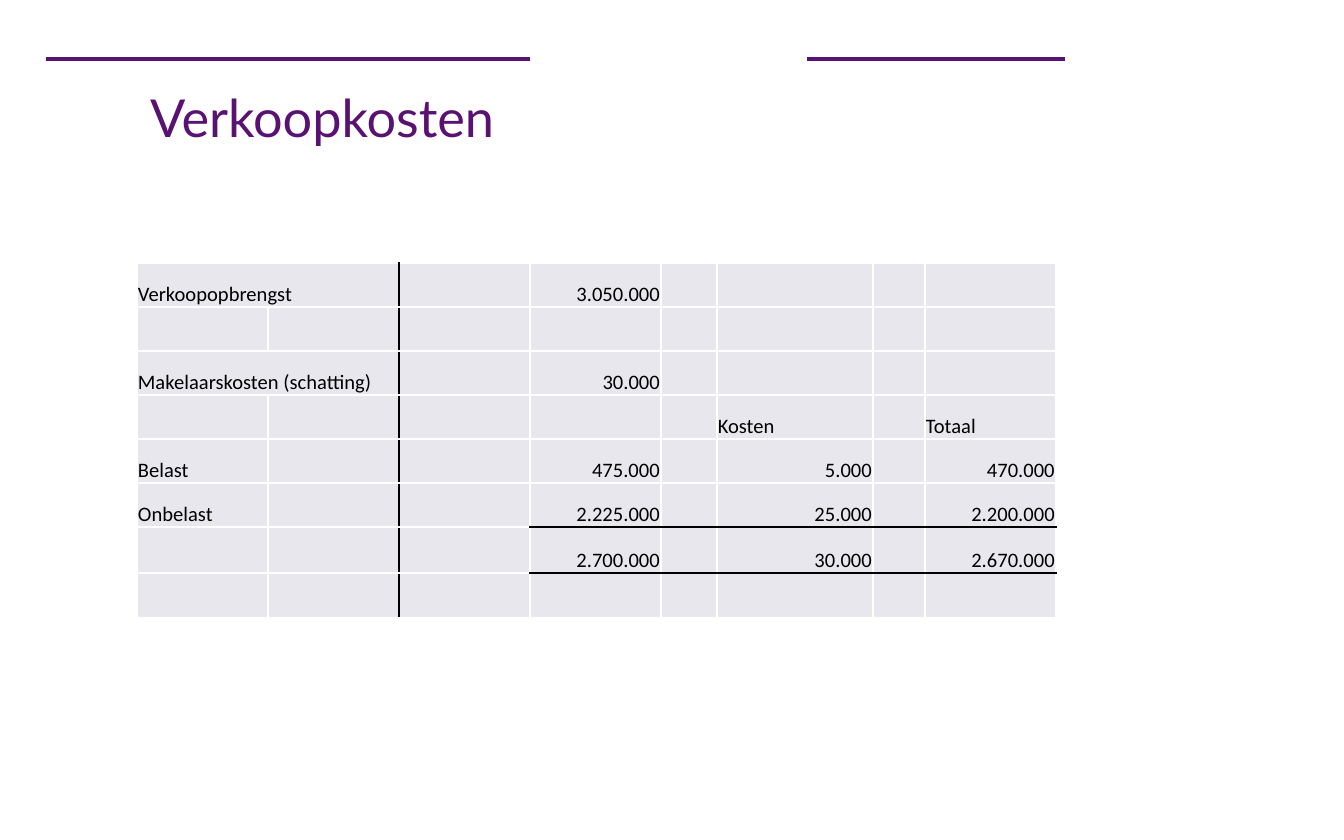
import lxml.etree
import pptx
import pptx.dml.color
import pptx.enum.shapes
import pptx.enum.text
import pptx.oxml.ns
import pptx.util

PX = 914400 / 134.4
COLORS = {"purple": "591172", "cell": "E8E7EE", "ink": "000000", "grid": "FFFFFF"}
COLUMNS = [131, 131, 131, 131, 56, 156, 52, 131]
ROWS = [44, 44, 44, 44, 44, 44, 46, 45]
COSTS = [
    ["Verkoopopbrengst", "", "", "3.050.000", "", "", "", ""],
    [""] * 8,
    ["Makelaarskosten (schatting)", "", "", "30.000", "", "", "", ""],
    ["", "", "", "", "", "Kosten", "", "Totaal"],
    ["Belast", "", "", "475.000", "", "5.000", "", "470.000"],
    ["Onbelast", "", "", "2.225.000", "", "25.000", "", "2.200.000"],
    ["", "", "", "2.700.000", "", "30.000", "", "2.670.000"],
    [""] * 8,
]
MERGED_ROWS = (0, 2)
RULED_ROWS = (5, 6)
LABEL_COLUMNS = 2
FIRST_AMOUNT = 3


def px(length):
    """Turn px into EMU."""
    return pptx.util.Emu(round(length * PX))


def rgb(name):
    """Look up a colour by name."""
    return pptx.dml.color.RGBColor.from_string(COLORS[name])


def apply(target, values):
    """Set attributes from a dict of format values."""
    for key, value in values.items():
        setattr(target, key, value)


def write(paragraph, text, font, size, color):
    """Write one formatted run into a paragraph."""
    run = paragraph.add_run()
    run.text = text
    apply(run.font, {"name": font, "size": pptx.util.Pt(size)})
    run.font.color.rgb = rgb(color)


def add_header_rules(slide, left, top, width):
    """Draw the two rules across the top of the box."""
    for start, end in ((0, 484), (761, width)):
        rule = slide.shapes.add_connector(
            pptx.enum.shapes.MSO_CONNECTOR.STRAIGHT,
            px(left + start), px(top), px(left + end), px(top))
        rule.line.color.rgb = rgb("purple")
        rule.line.width = pptx.util.Pt(2)
        lxml.etree.SubElement(rule._element.spPr, pptx.oxml.ns.qn("a:effectLst"))


def add_title(slide, left, top, width, height):
    """Place the slide title in the box."""
    title = slide.shapes.add_textbox(px(left), px(top), px(width), px(height))
    title.text_frame.word_wrap = True
    write(title.text_frame.paragraphs[0], "Verkoopkosten", "Lato", 28, "purple")


def add_border(cell, side, color):
    """Draw one side of a cell border."""
    border = lxml.etree.SubElement(
        cell._tc.get_or_add_tcPr(), pptx.oxml.ns.qn(f"a:ln{side}"), w="12700")
    fill = lxml.etree.SubElement(border, pptx.oxml.ns.qn("a:solidFill"))
    lxml.etree.SubElement(fill, pptx.oxml.ns.qn("a:srgbClr"), val=COLORS[color])


def border_colors(row, column):
    """Give the colour of each side of a cell."""
    amount = column >= FIRST_AMOUNT
    dark = {
        "L": column == LABEL_COLUMNS,
        "R": column == LABEL_COLUMNS - 1 or (row in MERGED_ROWS and column == 0),
        "T": amount and row - 1 in RULED_ROWS,
        "B": amount and row in RULED_ROWS,
    }
    return {side: "ink" if is_dark else "grid" for side, is_dark in dark.items()}


def fill_cell(cell, text, row, column):
    """Format one cell and write its text."""
    apply(cell, {
        "margin_left": px(1), "margin_right": px(1), "margin_top": px(1),
        "margin_bottom": 0, "vertical_anchor": pptx.enum.text.MSO_ANCHOR.BOTTOM})
    for side, color in border_colors(row, column).items():
        add_border(cell, side, color)
    cell.fill.solid()
    cell.fill.fore_color.rgb = rgb("cell")
    paragraph = cell.text_frame.paragraphs[0]
    if text:
        if text[0].isdigit():
            paragraph.alignment = pptx.enum.text.PP_ALIGN.RIGHT
        write(paragraph, text, "Calibri", 11, "ink")
    else:
        lxml.etree.SubElement(
            paragraph._p, pptx.oxml.ns.qn("a:endParaRPr"), sz="1100")


def add_cost_table(slide, left, top):
    """Place the cost table with its top left corner at the given point."""
    table = slide.shapes.add_table(
        len(ROWS), len(COLUMNS), px(left), px(top),
        px(sum(COLUMNS)), px(sum(ROWS))).table
    apply(table, {"first_row": False, "horz_banding": False})
    for column, width in zip(table.columns, COLUMNS):
        column.width = px(width)
    for row, height in zip(table.rows, ROWS):
        row.height = px(height)
    for row, texts in enumerate(COSTS):
        for column, text in enumerate(texts):
            fill_cell(table.cell(row, column), text, row, column)
    for row in MERGED_ROWS:
        table.cell(row, 0).merge(table.cell(row, LABEL_COLUMNS - 1))


def main():
    """Build and save the slide."""
    deck = pptx.Presentation()
    apply(deck, {"slide_width": px(1344), "slide_height": px(840)})
    slide = deck.slides.add_slide(deck.slide_layouts[6])
    add_header_rules(slide, 46, 59, 1019)
    add_title(slide, 137, 79, 1050, 142)
    add_cost_table(slide, 137, 263)
    deck.save("out.pptx")


if __name__ == "__main__":
    main()
